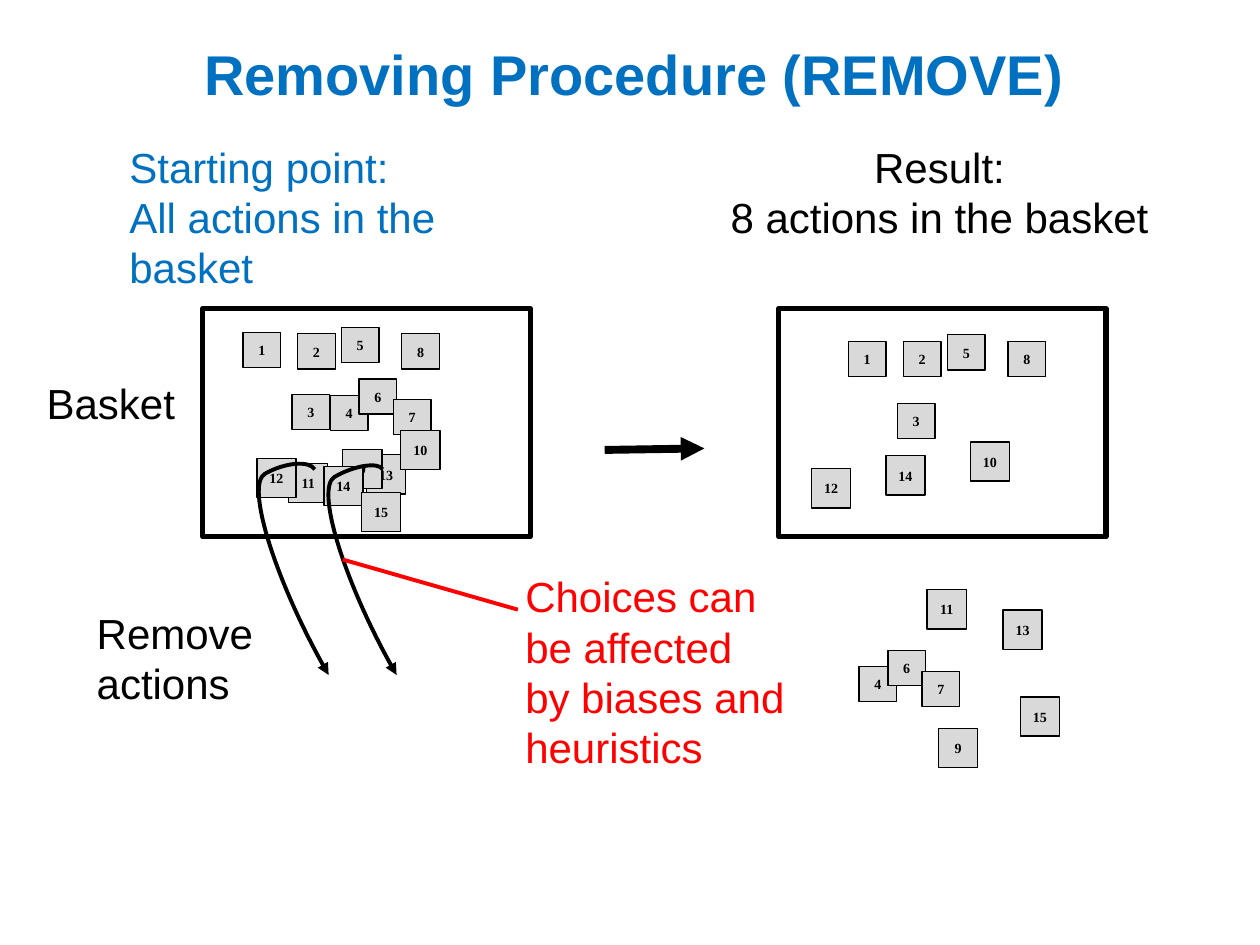
import dataclasses

import pptx
import pptx.dml.color
import pptx.enum.shapes
import pptx.enum.text
import pptx.oxml
import pptx.oxml.ns
import pptx.util
from pptx.util import Cm, Pt

ALIGN = pptx.enum.text.PP_ALIGN
ANCHOR = pptx.enum.text.MSO_ANCHOR
RECTANGLE = pptx.enum.shapes.MSO_SHAPE.RECTANGLE
CONNECTOR = pptx.enum.shapes.MSO_CONNECTOR


@dataclasses.dataclass(frozen=True)
class Theme:
    blue: str = "0070C0"
    red: str = "FF0000"
    black: str = "000000"
    tile: str = "D9D9D9"
    body_font: str = "Arial"
    tile_font: str = "Times New Roman"
    title_size: int = 32
    body_size: int = 24
    tile_size: int = 8


THEME = Theme()
FRAME_SIZE = (6.6, 4.6)

START_TILES = {
    13: (3.30, 2.95), 1: (0.81, 0.48), 2: (1.91, 0.51), 3: (1.80, 1.73),
    4: (2.57, 1.75), 5: (2.79, 0.38), 6: (3.15, 1.42), 7: (3.84, 1.83),
    8: (4.01, 0.51), 9: (2.82, 2.84), 10: (3.99, 2.46), 11: (1.73, 3.12),
    12: (1.09, 3.02), 14: (2.44, 3.18), 15: (3.20, 3.71),
}
KEPT_TILES = {
    1: (1.40, 0.66), 2: (2.51, 0.66), 3: (2.39, 1.91), 5: (3.40, 0.53),
    8: (4.62, 0.66), 10: (3.86, 2.69), 12: (0.66, 3.23), 14: (2.16, 2.97),
}
REMOVED_TILES = {
    13: (2.90, 0.41), 4: (0, 1.55), 6: (0.58, 1.22), 7: (1.27, 1.65),
    9: (1.60, 2.79), 11: (1.37, 0), 15: (3.25, 2.16),
}


def rgb(value):
    return pptx.dml.color.RGBColor.from_string(value)


def write_text(shape, *lines, size=THEME.body_size, font=THEME.body_font,
               color=THEME.black, bold=False, align=ALIGN.LEFT,
               anchor=ANCHOR.TOP, wrap=True):
    frame = shape.text_frame
    frame.word_wrap = wrap
    frame.vertical_anchor = anchor
    for index, line in enumerate(lines):
        paragraph = frame.add_paragraph() if index else frame.paragraphs[0]
        paragraph.alignment = align
        run = paragraph.add_run()
        run.text = line
        run.font.size = Pt(size)
        run.font.name = font
        run.font.bold = bold
        run.font.color.rgb = rgb(color)


def add_label(slide, box, *lines, **text_format):
    shape = slide.shapes.add_textbox(*map(Cm, box))
    write_text(shape, *lines, **text_format)
    return shape


def add_box(slide, box, line_width, fill=None):
    shape = slide.shapes.add_shape(RECTANGLE, *map(Cm, box))
    shape.shadow.inherit = False
    if fill:
        shape.fill.solid()
        shape.fill.fore_color.rgb = rgb(fill)
    else:
        shape.fill.background()
    shape.line.color.rgb = rgb(THEME.black)
    shape.line.width = Pt(line_width)
    return shape


def add_line(slide, start, end, width, color=THEME.black,
             kind=CONNECTOR.STRAIGHT, arrow=False):
    line = slide.shapes.add_connector(kind, *map(Cm, (*start, *end)))
    line.line.color.rgb = rgb(color)
    line.line.width = Pt(width)
    if arrow:
        tail = pptx.oxml.ns.qn("a:tailEnd")
        line.line._get_or_add_ln().makeelement(tail)
        outline = line.line._get_or_add_ln()
        outline.append(outline.makeelement(tail, {"type": "triangle"}))
    properties = line._element.spPr
    properties.append(properties.makeelement(pptx.oxml.ns.qn("a:effectLst")))
    return line


def add_removal_arrow(slide, left, top, bend):
    line = add_line(slide, (left, top), (left + 3.73, top + 1.83), 2.25,
                    kind=CONNECTOR.CURVE, arrow=True)
    properties = line._element.spPr
    properties.find(pptx.oxml.ns.qn("a:xfrm")).set("rot", str(60 * 60000))
    adjustments = properties.find(".//" + pptx.oxml.ns.qn("a:avLst"))
    adjustments.append(adjustments.makeelement(
        pptx.oxml.ns.qn("a:gd"), {"name": "adj1", "fmla": f"val {bend}"}))


def add_tiles(slide, left, top, tiles):
    for number, (x, y) in tiles.items():
        width, height = (0.76, 0.71) if number < 9 else (0.79, 0.79)
        tile = add_box(slide, (left + x, top + y, width, height), 0.75, THEME.tile)
        write_text(tile, str(number), size=THEME.tile_size, font=THEME.tile_font,
                   bold=True, align=ALIGN.CENTER, anchor=ANCHOR.MIDDLE, wrap=False)


def add_basket(slide, left, top, tiles):
    add_box(slide, (left, top, *FRAME_SIZE), 3)
    add_tiles(slide, left, top, tiles)


def add_title(slide, left, top):
    title = add_label(slide, (left, top, 22.17, 3), "Removing Procedure (REMOVE)",
                      size=THEME.title_size, color=THEME.blue, bold=True,
                      align=ALIGN.CENTER)
    frame = title.text_frame
    frame.margin_left = frame.margin_right = 0
    frame.margin_top = frame.margin_bottom = 0


def add_start(slide, left, top):
    add_label(slide, (left - 1.73, top - 3.5, 8.33, 3.33), "Starting point:",
              "All actions in the basket", color=THEME.blue)
    add_label(slide, (left - 3.4, top + 1.27, 3.12, 1.27), "Basket", wrap=False)
    add_label(slide, (left - 2.39, top + 5.9, 3.99, 2.31), "Remove actions")
    add_basket(slide, left, top, START_TILES)
    for x, bend in ((0.53, -11400), (1.9, -9500)):
        add_removal_arrow(slide, left + x, top + 4.4, bend)


def add_comment(slide, left, top):
    add_label(slide, (left, top, 6.15, 4.37), "Choices can be affected",
              "by biases and heuristics", color=THEME.red)
    add_line(slide, (left - 3.43, top - 0.1), (left + 0.1, top + 0.91), 2.25, THEME.red)


def add_result(slide, left, top):
    add_label(slide, (left - 1.27, top - 3.5, 9.02, 2.31), "Result:",
              "8 actions in the basket", align=ALIGN.CENTER, wrap=False)
    add_basket(slide, left, top, KEPT_TILES)
    add_tiles(slide, left + 1.62, top + 5.67, REMOVED_TILES)


def main():
    presentation = pptx.Presentation()
    presentation.slide_width = Cm(25.4)
    presentation.slide_height = Cm(19.05)
    slide = presentation.slides.add_slide(presentation.slide_layouts[6])
    add_title(slide, 1.7, 0.79)
    add_start(slide, 4.09, 6.22)
    add_line(slide, (12.19, 9.07), (14.2, 9.04), 4.5, arrow=True)
    add_comment(slide, 10.34, 11.38)
    add_result(slide, 15.7, 6.22)
    presentation.save("out.pptx")


if __name__ == "__main__":
    main()
